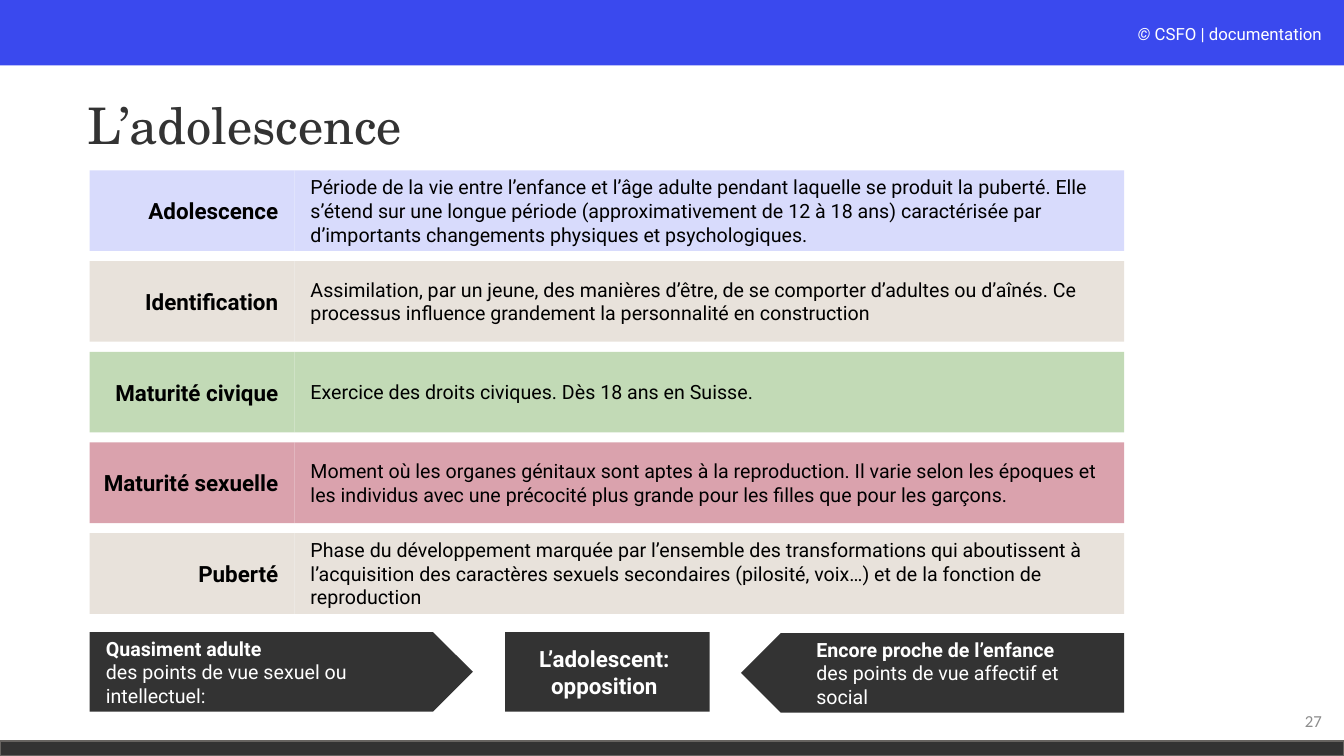
from pptx import Presentation
from pptx.dml.color import RGBColor
from pptx.enum.shapes import MSO_SHAPE as SHAPE
from pptx.enum.text import MSO_ANCHOR as ANCHOR, PP_ALIGN as ALIGN
from pptx.oxml.ns import qn
from pptx.util import Inches, Pt

COLORS = {
    "blue": "3A49EE", "dark": "333333", "edge": "666360", "white": "FFFFFF",
    "black": "000000", "grey": "8C8C8C", "lilac": "D8DBFC", "sand": "E8E2DB",
    "green": "C2DAB6", "rose": "DAA2AD",
}

DEFINITIONS = [
    ("Adolescence", "lilac",
     "Période de la vie entre l’enfance et l’âge adulte pendant laquelle se produit "
     "la puberté. Elle s’étend sur une longue période (approximativement de 12 à "
     "18 ans) caractérisée par d’importants changements physiques et psychologiques."),
    ("Identification", "sand",
     "Assimilation, par un jeune, des manières d’être, de se comporter d’adultes ou "
     "d’aînés. Ce processus influence grandement la personnalité en construction"),
    ("Maturité civique", "green",
     "Exercice des droits civiques. Dès 18 ans en Suisse."),
    ("Maturité sexuelle", "rose",
     "Moment où les organes génitaux sont aptes à la reproduction. Il varie selon les "
     "époques et les individus avec une précocité plus grande pour les filles que "
     "pour les garçons."),
    ("Puberté", "sand",
     "Phase du développement marquée par l’ensemble des transformations qui "
     "aboutissent à l’acquisition des caractères sexuels secondaires (pilosité, "
     "voix…) et de la fonction de reproduction"),
]

LEFT, TERM_W, TEXT_W = 0.89, 2.03, 8.23
TOP, ROW_H, PITCH = 1.69, 0.8, 0.9
ARROW_W, ARROW_H = 3.8, 0.79


class SlideBuilder:
    def __init__(self, prs, font="Roboto"):
        self.slide = prs.slides.add_slide(prs.slide_layouts[5])
        self.font = font

    def color(self, name):
        return RGBColor.from_string(COLORS[name])

    def format_run(self, r, size, color, bold=False, font=None):
        r.font.name = font or self.font
        r.font.size = Pt(size)
        r.font.bold = bold
        r.font.color.rgb = self.color(color)

    def fill_text(self, sp, paragraphs, size, color, align=ALIGN.LEFT,
                  insets=(0.1, 0.1), font=None):
        """Fill a shape with paragraphs, each a list of (text, bold) runs."""
        tf = sp.text_frame
        tf.word_wrap = True
        tf.vertical_anchor = ANCHOR.MIDDLE
        tf.margin_left, tf.margin_right = (Inches(x) for x in insets)
        tf.margin_top = tf.margin_bottom = Inches(0.05)
        for i, runs in enumerate(paragraphs):
            p = tf.add_paragraph() if i else tf.paragraphs[0]
            p.alignment = align
            for text, bold in runs:
                r = p.add_run()
                r.text = text
                self.format_run(r, size, color, bold, font)
        return tf

    def title(self, text, box):
        sp = self.slide.shapes.title
        sp.left, sp.top, sp.width, sp.height = (Inches(x) for x in box)
        tf = self.fill_text(sp, [[(text, False)]], 36, "dark", font="TeX Gyre Schola")
        tf.paragraphs[0].line_spacing = 0.9

    def block(self, box, fill, shape=SHAPE.RECTANGLE, line=None, flip=False):
        sp = self.slide.shapes.add_shape(shape, *(Inches(x) for x in box))
        sp.shadow.inherit = False
        sp.fill.solid()
        sp.fill.fore_color.rgb = self.color(fill)
        if line:
            sp.line.color.rgb = self.color(line)
            sp.line.width = Pt(1)
        else:
            sp.line.fill.background()
        if flip:
            sp._element.spPr.find(qn("a:xfrm")).set("flipH", "1")
        return sp

    def label(self, box, runs, color, font=None):
        sp = self.slide.shapes.add_textbox(*(Inches(x) for x in box))
        return self.fill_text(sp, [runs], 12, color, ALIGN.RIGHT, font=font)

    def definition(self, top, term, fill, text):
        sp = self.block((LEFT, top, TERM_W, ROW_H), fill)
        self.fill_text(sp, [[(term, True)]], 16, "black", ALIGN.RIGHT, (0.1, 0.16))
        sp = self.block((LEFT + TERM_W, top, TEXT_W, ROW_H), fill)
        self.fill_text(sp, [[(text, False)]], 14, "black", insets=(0.16, 0.1))

    def arrow(self, left, top, heading, text, inset, flip=False):
        sp = self.block((left, top, ARROW_W, ARROW_H), "dark", SHAPE.PENTAGON, flip=flip)
        self.fill_text(sp, [[(heading, True)], [(text, False)]], 14, "white",
                       insets=(inset, 0.1))


def main():
    prs = Presentation()
    prs.slide_width, prs.slide_height = Inches(13.33), Inches(7.5)
    s = SlideBuilder(prs)

    s.block((0, 0, 13.33, 0.65), "blue")
    s.block((0, 7.35, 13.33, 0.15), "dark", line="edge")
    tf = s.label((8.62, 0.19, 4.59, 0.3),
                 [("© ", False), ("CSFO | documentation", False)], "white")
    tf.paragraphs[0].runs[0].font.italic = True
    s.label((10.21, 6.95, 3, 0.4), [("27", False)], "grey", font="Calibri")
    s.title("L’adolescence", (0.77, 0.55, 8.82, 1.45))

    for i, (term, fill, text) in enumerate(DEFINITIONS):
        s.definition(TOP + i * PITCH, term, fill, text)

    s.arrow(LEFT, 6.27, "Quasiment adulte",
            "des points de vue sexuel ou intellectuel:", 0.16)
    sp = s.block((5.01, 6.27, TERM_W, ARROW_H), "dark")
    s.fill_text(sp, [[("L’adolescent:", True)], [("opposition", True)]], 16, "white",
                ALIGN.CENTER, (0.1, 0.16))
    s.arrow(7.35, 6.28, "Encore proche de l’enfance",
            "des points de vue affectif et social", 0.55, flip=True)

    prs.save("out.pptx")


if __name__ == "__main__":
    main()
